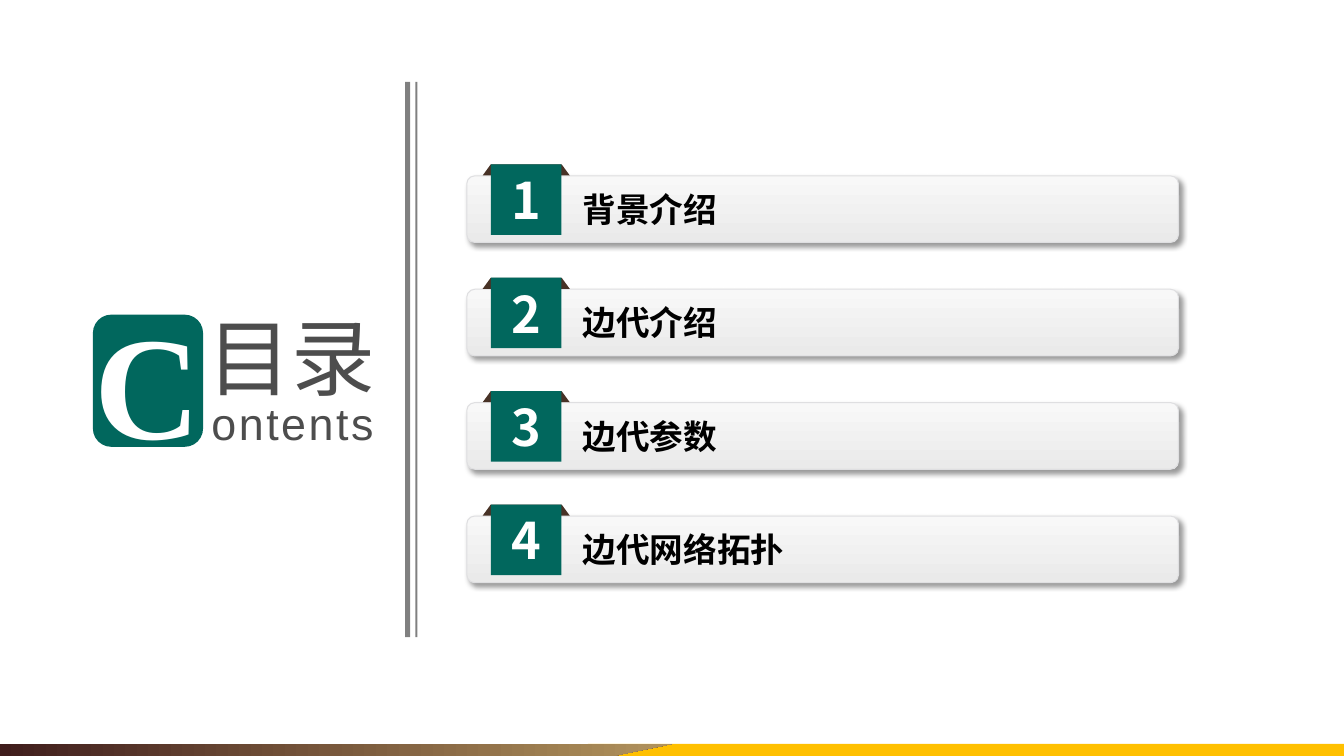
"""Build a contents slide with four numbered bars."""
from lxml import etree
from pptx import Presentation
from pptx.dml.color import RGBColor
from pptx.enum.shapes import MSO_SHAPE
from pptx.enum.text import MSO_ANCHOR, MSO_AUTO_SIZE, PP_ALIGN
from pptx.oxml.ns import qn
from pptx.util import Pt

RECT, ROUND, TRAPEZOID = MSO_SHAPE.RECTANGLE, MSO_SHAPE.ROUNDED_RECTANGLE, MSO_SHAPE.TRAPEZOID
LEFT, CENTER = PP_ALIGN.LEFT, PP_ALIGN.CENTER
MIDDLE, NO_FIT = MSO_ANCHOR.MIDDLE, MSO_AUTO_SIZE.NONE
SANS, SERIF, LATIN = "Noto Sans CJK SC", "Times New Roman", "Arial"
COLORS = {
    "green": "01675D", "brown": "483226", "gold": "FFC000", "rule": "808080",
    "heading": "4D4D4D", "white": "FFFFFF", "black": "000000", "edge": "DFDFE1",
    "bar_top": "F8F8F8", "bar_bottom": "EAEAEA", "dark": "3F1D1C", "tan": "B2935C",
}
ITEMS = ["背景介绍", "边代介绍", "边代参数", "边代网络拓扑"]
FIRST_TOP, STEP = 117.4, 81


def rgb(name):
    return RGBColor.from_string(COLORS[name])


def fill_gradient(shape, start, end, angle):
    shape.fill.gradient()
    shape.fill.gradient_angle = angle
    for stop, name in zip(shape.fill.gradient_stops, (start, end)):
        stop.color.rgb = rgb(name)


def add_block(s, kind, box, color):
    sp = s.shapes.add_shape(kind, *map(Pt, box))
    sp.shadow.inherit = False
    sp.fill.solid()
    sp.fill.fore_color.rgb = rgb(color)
    sp.line.fill.background()
    return sp


def add_drop_shadow(sp):
    effects = sp._element.spPr.find(qn("a:effectLst"))
    shadow = etree.SubElement(effects, qn("a:outerShdw"), blurRad=str(Pt(4)),
                              dist=str(Pt(3)), dir="2700000", algn="tl", rotWithShape="0")
    color = etree.SubElement(shadow, qn("a:srgbClr"), val=COLORS["black"])
    etree.SubElement(color, qn("a:alpha"), val="40000")


def write(sp, text, size, color, font=SANS, bold=False, align=LEFT, spacing=0):
    tf = sp.text_frame
    tf.margin_left = tf.margin_right = tf.margin_top = tf.margin_bottom = 0
    tf.word_wrap = False
    tf.auto_size = NO_FIT
    tf.vertical_anchor = MIDDLE
    p = tf.paragraphs[0]
    p.text = text
    p.alignment = align
    p.font.name = font
    p.font.size = Pt(size)
    p.font.bold = bold
    p.font.color.rgb = rgb(color)
    props = p.font._element
    etree.SubElement(props, qn("a:ea"), typeface=font)
    props.set("spc", str(spacing))


def add_label(s, box, text, *style, **options):
    write(s.shapes.add_textbox(*map(Pt, box)), text, *style, **options)


def add_footer(s):
    add_block(s, RECT, (420, 531.4, 540, 8.6), "gold")
    builder = s.shapes.build_freeform(0, Pt(531.4))
    builder.add_line_segments([(Pt(x), Pt(y)) for x, y in ((480, 531.4), (438, 540), (0, 540))])
    band = builder.convert_to_shape()
    band.shadow.inherit = False
    band.line.fill.background()
    fill_gradient(band, "dark", "tan", 0)


def add_heading(s):
    title = s.shapes.title
    title.left, title.top, title.width, title.height = map(Pt, (148.3, 214, 125, 80))
    write(title, "目录", 60, "heading")
    badge = add_block(s, ROUND, (66.4, 224.8, 78.7, 94.4), "green")
    write(badge, "C", 105, "white", font=SERIF, bold=True, align=CENTER)
    add_label(s, (151, 283, 118, 37), "ontents", 32, "heading", font=LATIN, spacing=180)
    for left, width in ((289.4, 3.6), (296.8, 1.4)):
        add_block(s, RECT, (left, 58.4, width, 396.7), "rule")


def add_item(s, number, text):
    top = FIRST_TOP + (number - 1) * STEP
    bar = add_block(s, ROUND, (333.4, top + 8.2, 508.4, 47.6), "bar_top")
    bar.adjustments[0] = 0.12
    fill_gradient(bar, "bar_top", "bar_bottom", 270)
    bar.line.color.rgb = rgb("edge")
    bar.line.width = Pt(0)
    add_drop_shadow(bar)
    fold = add_block(s, TRAPEZOID, (344.8, top, 62.2, 7.9), "brown")
    fold.adjustments[0] = 0.73
    tag = add_block(s, RECT, (350.7, top, 50.4, 50.4), "green")
    write(tag, str(number), 36, "white", bold=True, align=CENTER)
    add_label(s, (416.2, top + 14, 410, 36), text, 24, "black", bold=True)


def main():
    prs = Presentation()
    prs.slide_width, prs.slide_height = Pt(960), Pt(540)
    s = prs.slides.add_slide(prs.slide_layouts[5])
    add_footer(s)
    add_heading(s)
    for number, text in enumerate(ITEMS, 1):
        add_item(s, number, text)
    prs.save("out.pptx")


if __name__ == "__main__":
    main()
